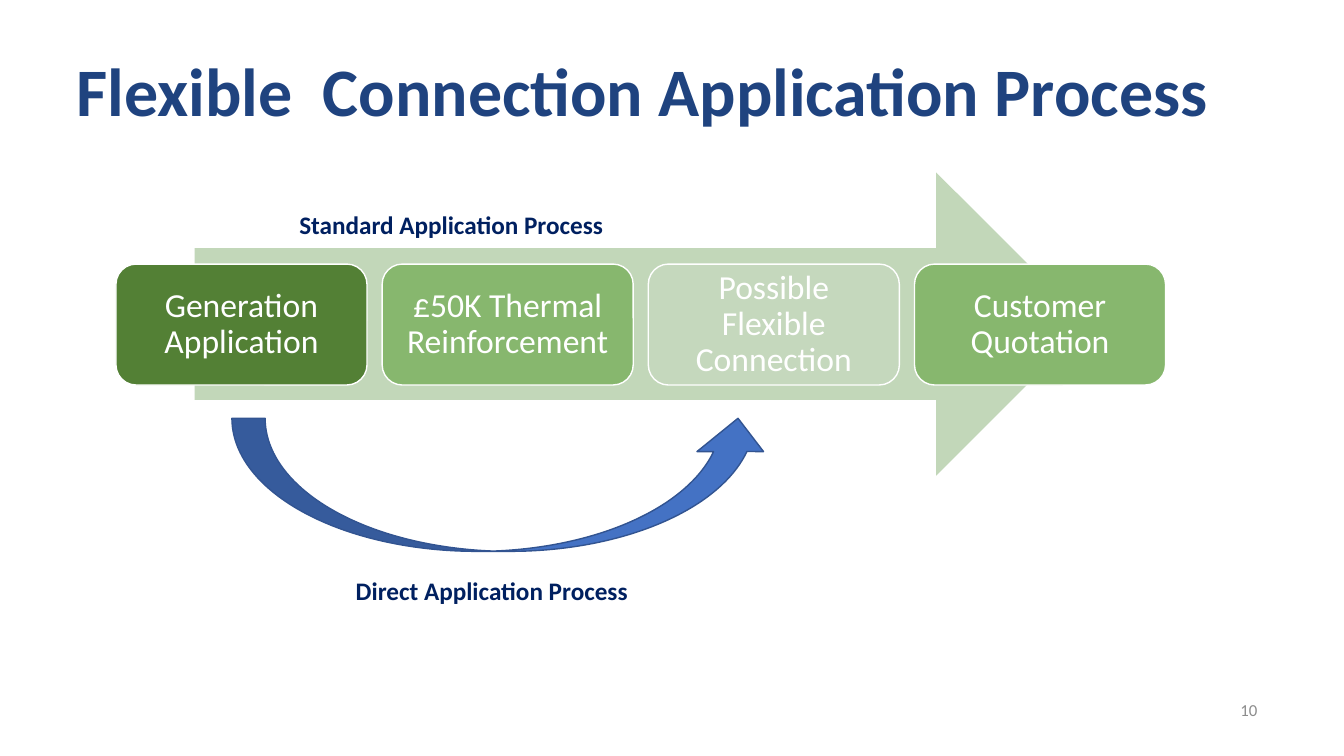
"""Build the flexible connection application process slide."""
from pptx import Presentation
from pptx.dml.color import RGBColor
from pptx.enum.shapes import MSO_SHAPE
from pptx.enum.text import MSO_ANCHOR, PP_ALIGN
from pptx.util import Inches, Pt

RIGHT_ARROW = MSO_SHAPE.RIGHT_ARROW
ROUNDED = MSO_SHAPE.ROUNDED_RECTANGLE
CURVED_ARROW = MSO_SHAPE.CURVED_DOWN_ARROW
TOP, MIDDLE = MSO_ANCHOR.TOP, MSO_ANCHOR.MIDDLE
LEFT, CENTER, RIGHT = PP_ALIGN.LEFT, PP_ALIGN.CENTER, PP_ALIGN.RIGHT

WHITE = RGBColor(0xFF, 0xFF, 0xFF)
TITLE_BLUE = RGBColor(0x1F, 0x43, 0x7F)
NAVY = RGBColor(0x00, 0x20, 0x60)
GREY = RGBColor(0x8C, 0x8C, 0x8C)
BLUE = RGBColor(0x44, 0x72, 0xC4)
BLUE_EDGE = RGBColor(0x32, 0x54, 0x91)
PALE_GREEN = RGBColor(0xC2, 0xD7, 0xB9)
DARK_GREEN = RGBColor(0x53, 0x80, 0x35)
GREEN = RGBColor(0x87, 0xB7, 0x6E)
FADED_GREEN = RGBColor(0xC5, 0xD8, 0xBD)

STEPS = [
    ("Generation Application", DARK_GREEN),
    ("£50K Thermal Reinforcement", GREEN),
    ("Possible Flexible Connection", FADED_GREEN),
    ("Customer Quotation", GREEN),
]
STEP_LEFT, STEP_PITCH = 1.15, 2.64


def write(sp, text, size, color, bold=False, align=LEFT, anchor=MIDDLE):
    """Put one styled paragraph into a shape and return it."""
    tf = sp.text_frame
    tf.word_wrap = True
    tf.vertical_anchor = anchor
    p = tf.paragraphs[0]
    p.text = text
    p.alignment = align
    p.font.name = "Calibri"
    p.font.size = Pt(size)
    p.font.bold = bold
    p.font.color.rgb = color
    return p


def add_text(slide, box, text, size, color, **style):
    """Add a text box."""
    sp = slide.shapes.add_textbox(*map(Inches, box))
    write(sp, text, size, color, **style)


def add_block(slide, kind, box, fill, edge=None):
    """Add a filled preset shape with an optional outline."""
    sp = slide.shapes.add_shape(kind, *map(Inches, box))
    sp.shadow.inherit = False
    sp.fill.solid()
    sp.fill.fore_color.rgb = fill
    if edge is None:
        sp.line.fill.background()
    else:
        sp.line.color.rgb = edge
        sp.line.width = Pt(1)
    return sp


def add_step(slide, index, text, fill):
    """Add one process step at its place in the row."""
    box = (STEP_LEFT + index * STEP_PITCH, 2.62, 2.49, 1.2)
    sp = add_block(slide, ROUNDED, box, fill, WHITE)
    tf = sp.text_frame
    tf.margin_left = tf.margin_right = Inches(0.1)
    tf.margin_top = tf.margin_bottom = Inches(0.1)
    p = write(sp, text, 24, WHITE, align=CENTER)
    p.line_spacing = 0.9


def main():
    """Create the slide and save it."""
    prs = Presentation()
    prs.slide_width, prs.slide_height = Inches(13.33), Inches(7.5)
    slide = prs.slides.add_slide(prs.slide_layouts[6])

    add_text(slide, (0.66, 0.65, 11.86, 0.48),
             "Flexible  Connection Application Process", 48.5, TITLE_BLUE, bold=True)
    add_text(slide, (0.69, 6.93, 11.88, 0.22), "10", 12, GREY, align=RIGHT)

    direct = add_block(slide, CURVED_ARROW, (2.3, 4.15, 5.35, 1.32), BLUE, BLUE_EDGE)
    direct.element.spPr.xfrm.set("flipV", "1")
    add_text(slide, (2.87, 2.03, 3.73, 0.4), "Standard Application Process",
             18, NAVY, bold=True, anchor=TOP)
    add_text(slide, (3.43, 5.66, 2.93, 0.4), "Direct Application Process",
             18, NAVY, bold=True, anchor=TOP)

    add_block(slide, RIGHT_ARROW, (1.93, 1.71, 8.86, 3.01), PALE_GREEN)
    for index, (text, fill) in enumerate(STEPS):
        add_step(slide, index, text, fill)

    prs.save("out.pptx")


if __name__ == "__main__":
    main()
